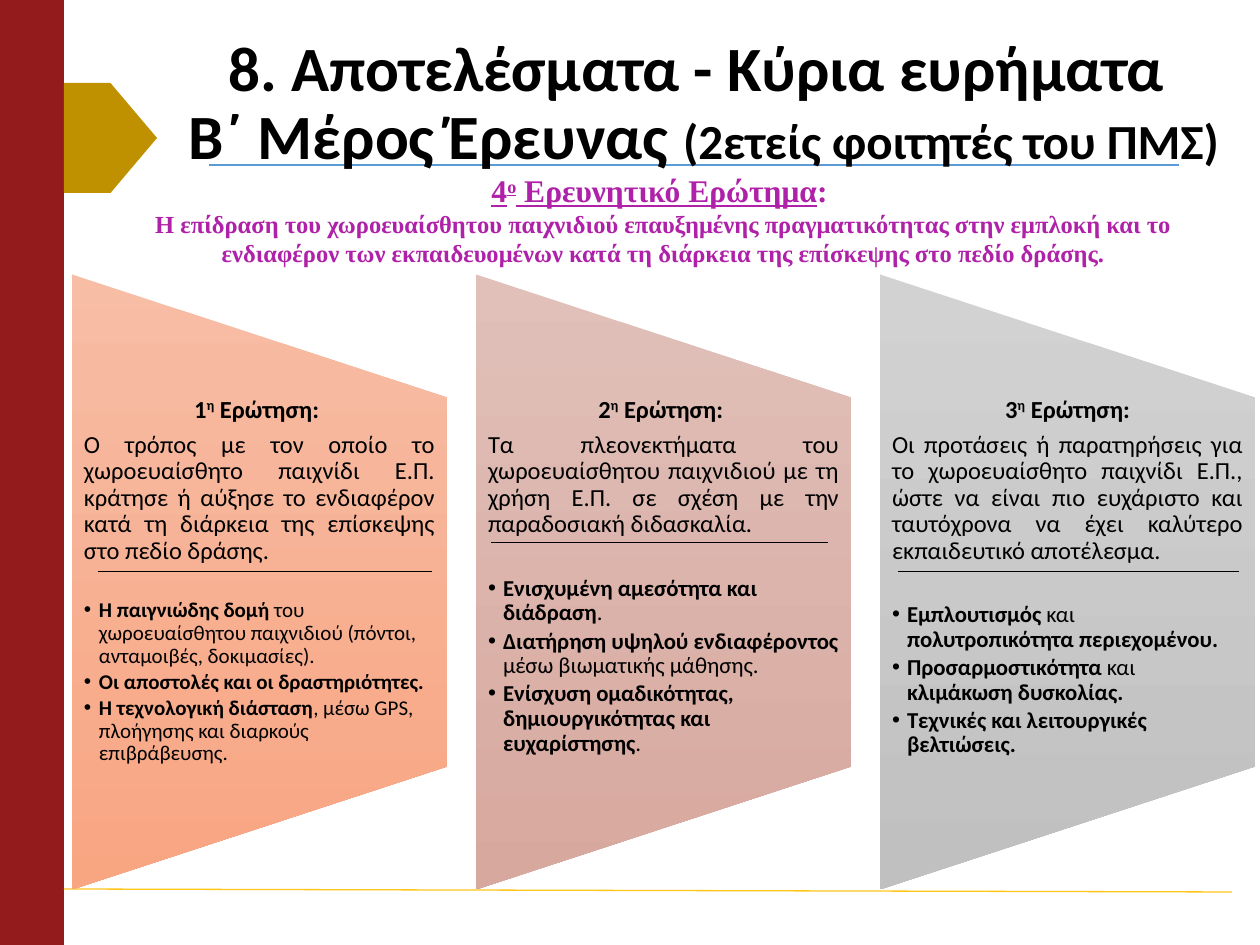
from dataclasses import dataclass

from lxml.etree import SubElement
from pptx import Presentation
from pptx.dml.color import RGBColor as RGB
from pptx.enum.shapes import MSO_CONNECTOR as Line, MSO_SHAPE as Kind
from pptx.enum.text import MSO_ANCHOR as Anchor, MSO_AUTO_SIZE as Auto, PP_ALIGN as Align
from pptx.oxml.ns import qn
from pptx.util import Emu, Pt


@dataclass(frozen=True)
class Theme:
    sans: str = "Calibri"
    serif: str = "Times New Roman"
    ink: str = "000000"
    plum: str = "AF21A8"
    bar: str = "931B1B"
    arrow: str = "BF9000"
    blue: str = "5B9BD5"
    gold: str = "FFC61A"
    title: int = 36
    note: int = 28
    lead: int = 18
    text: int = 14


T = Theme()
LEFT, PITCH, WIDE, TALL, MID = 72, 404, 375, 615, 582

# Each run is its text and its marks: b bold, u underline, s superscript.
TITLE = ("8. Αποτελέσματα - Κύρια ευρήματα ", "b")
PART = ("Β΄ Μέρος Έρευνας ", "b")
NOTE = ("(2ετείς φοιτητές του ΠΜΣ)", "b")
LEAD = [("4", "bu"), ("ο", "bus"), (" Ερευνητικό Ερώτημα", "bu"), (": ", "b")]
TOPIC = [("Η επίδραση του χωροευαίσθητου παιχνιδιού επαυξημένης πραγματικότητας στην "
          "εμπλοκή και το ενδιαφέρον των εκπαιδευομένων κατά τη διάρκεια της επίσκεψης "
          "στο πεδίο δράσης.", "b")]

# Heading, question, list size, gap above the list, panel colours,
# rule (x1, x2, y), list
PANELS = [
    (" Ερώτηση: ",
     "Ο τρόπος με τον οποίο το χωροευαίσθητο παιχνίδι Ε.Π. κράτησε ή αύξησε το "
     "ενδιαφέρον κατά τη διάρκεια της επίσκεψης στο πεδίο δράσης.",
     12, 15, ("F7BDA5", "F8A582"), (98, 432, 571), [
         [("Η παιγνιώδης δομή", "b"),
          (" του χωροευαίσθητου παιχνιδιού (πόντοι, ανταμοιβές, δοκιμασίες).", "")],
         [("Οι αποστολές και οι δραστηριότητες.", "b")],
         [("Η τεχνολογική διάσταση", "b"),
          (", μέσω GPS, πλοήγησης και διαρκούς επιβράβευσης.", "")]]),
    (" Ερώτηση: ",
     "Τα πλεονεκτήματα του χωροευαίσθητου παιχνιδιού με τη χρήση Ε.Π. σε σχέση με "
     "την παραδοσιακή διδασκαλία.",
     13, 17, ("E0C0B9", "D7A89E"), (491, 828, 542), [
         [("Ενισχυμένη αμεσότητα και διάδραση", "b"), (".", "")],
         [("Διατήρηση υψηλού ενδιαφέροντος", "b"), (" μέσω βιωματικής μάθησης.", "")],
         [("Ενίσχυση ομαδικότητας, δημιουργικότητας και ευχαρίστησης", "b"), (".", "")]]),
    (" Ερώτηση:",
     "Οι προτάσεις ή παρατηρήσεις για το χωροευαίσθητο παιχνίδι Ε.Π., ώστε να είναι "
     "πιο ευχάριστο και ταυτόχρονα να έχει καλύτερο εκπαιδευτικό αποτέλεσμα.",
     13, 17, ("D2D2D2", "C0C0C0"), (898, 1239, 571), [
         [("Εμπλουτισμός ", "b"), ("και", ""), (" πολυτροπικότητα περιεχομένου.", "b")],
         [("Προσαρμοστικότητα ", "b"), ("και", ""), (" κλιμάκωση δυσκολίας.", "b")],
         [("Τεχνικές και λειτουργικές βελτιώσεις.", "b")]]),
]


def px(n):
    return Emu(round(n * 914400 / 126))


def add_block(slide, kind, x, y, w, h):
    """Add a preset shape with neither shadow nor outline."""
    block = slide.shapes.add_shape(kind, px(x), px(y), px(w), px(h))
    block.shadow.inherit = False
    block.line.fill.background()
    return block


def add_solid(slide, kind, box, color):
    block = add_block(slide, kind, *box)
    block.fill.solid()
    block.fill.fore_color.rgb = RGB.from_string(color)


def add_panel(slide, x, colors):
    """Add a trapezoid turned on its side, shaded from top to bottom."""
    panel = add_block(slide, Kind.FLOWCHART_MANUAL_OPERATION,
                      x + (WIDE - TALL) / 2, MID - WIDE / 2, TALL, WIDE)
    panel.rotation = 270
    panel.fill.gradient()
    panel.fill.gradient_angle = 270
    for stop, color in zip(panel.fill.gradient_stops, colors):
        stop.color.rgb = RGB.from_string(color)
    panel._element.spPr.find(qn("a:gradFill")).set("rotWithShape", "0")


def add_rule(slide, x1, y1, x2, y2, color, width):
    rule = slide.shapes.add_connector(Line.STRAIGHT, px(x1), px(y1), px(x2), px(y2))
    rule.line.color.rgb = RGB.from_string(color)
    rule.line.width = Pt(width)
    SubElement(rule._element.spPr, qn("a:effectLst"))


def place(slide, holder, box, anchor=Anchor.TOP, inset=6):
    """Move a placeholder to the front and return its text frame."""
    holder.left, holder.top, holder.width, holder.height = map(px, box)
    slide.shapes._spTree.append(holder._element)
    frame = holder.text_frame
    frame.word_wrap = True
    frame.auto_size = Auto.NONE
    frame.vertical_anchor = anchor
    frame.margin_left = frame.margin_right = px(12)
    frame.margin_top = frame.margin_bottom = px(inset)
    return frame


def add_run(para, text, marks):
    run = para.add_run()
    run.text = text
    run.font.bold = "b" in marks
    if "u" in marks:
        run.font.underline = True
    if "s" in marks:
        run._r.get_or_add_rPr().set("baseline", "30000")
    return run


def add_para(frame, runs, size, align=Align.CENTER, line=0.9, before=0, after=0,
             face=T.sans, color=T.ink, bullet=False):
    para = frame.paragraphs[0]
    if para.runs:
        para = frame.add_paragraph()
    para.alignment, para.line_spacing = align, line
    para.space_before, para.space_after = Pt(before), Pt(after)
    props = para._p.get_or_add_pPr()
    indent = px(15) if bullet else 0
    props.set("marL", str(indent))
    props.set("indent", str(-indent))
    if bullet:
        SubElement(props, qn("a:buChar")).set("char", "•")
    else:
        SubElement(props, qn("a:buNone"))
    font = para.font
    font.name, font.size = face, Pt(size)
    font.color.rgb = RGB.from_string(color)
    for text, marks in runs:
        add_run(para, text, marks)
    return para


def add_frame(slide):
    """Draw the side bar, its arrow and the two long rules."""
    add_solid(slide, Kind.RECTANGLE, (0, 0, 64, 945), T.bar)
    add_solid(slide, Kind.PENTAGON, (64, 83, 93, 110), T.arrow)
    add_rule(slide, 209, 165, 1179, 165, T.blue, 0.75)
    add_rule(slide, 64, 889, 1232, 892, T.gold, 0.75)


def add_title(slide, holder):
    frame = place(slide, holder, (168, 66, 1071, 79), Anchor.MIDDLE)
    para = add_para(frame, [TITLE], T.title)
    para.add_line_break()
    add_run(para, *PART)
    add_run(para, *NOTE).font.size = Pt(T.note)


def add_column(slide, holder, num, panel):
    head, ask, size, gap, colors, (x1, x2, y), items = panel
    x = LEFT + (num - 1) * PITCH
    add_panel(slide, x, colors)
    frame = place(slide, holder, (x, 397, WIDE, 369), inset=0)
    add_para(frame, [(str(num), "b"), ("η", "bs"), (head, "b")], T.text, after=5)
    add_para(frame, [(ask, "")], T.text, Align.JUSTIFY, after=5)
    for i, item in enumerate(items):
        add_para(frame, item, size, Align.LEFT, before=0 if i else gap, after=2,
                 bullet=True)
    add_rule(slide, x1, y, x2, y, T.ink, 0.5)


def main():
    deck = Presentation()
    deck.slide_width, deck.slide_height = px(1260), px(945)
    slide = deck.slides.add_slide(deck.slide_layouts.get_by_name("Comparison"))
    title, lead, *bodies = [h for h in slide.placeholders
                            if h.placeholder_format.idx < 10]
    add_frame(slide)
    add_title(slide, title)
    for num, (holder, panel) in enumerate(zip(bodies, PANELS), 1):
        add_column(slide, holder, num, panel)

    frame = place(slide, lead, (98, 165, 1131, 111))
    for runs, size in ((LEAD, T.lead), (TOPIC, T.text)):
        add_para(frame, runs, size, line=1, face=T.serif, color=T.plum)
    deck.save("out.pptx")


if __name__ == "__main__":
    main()
